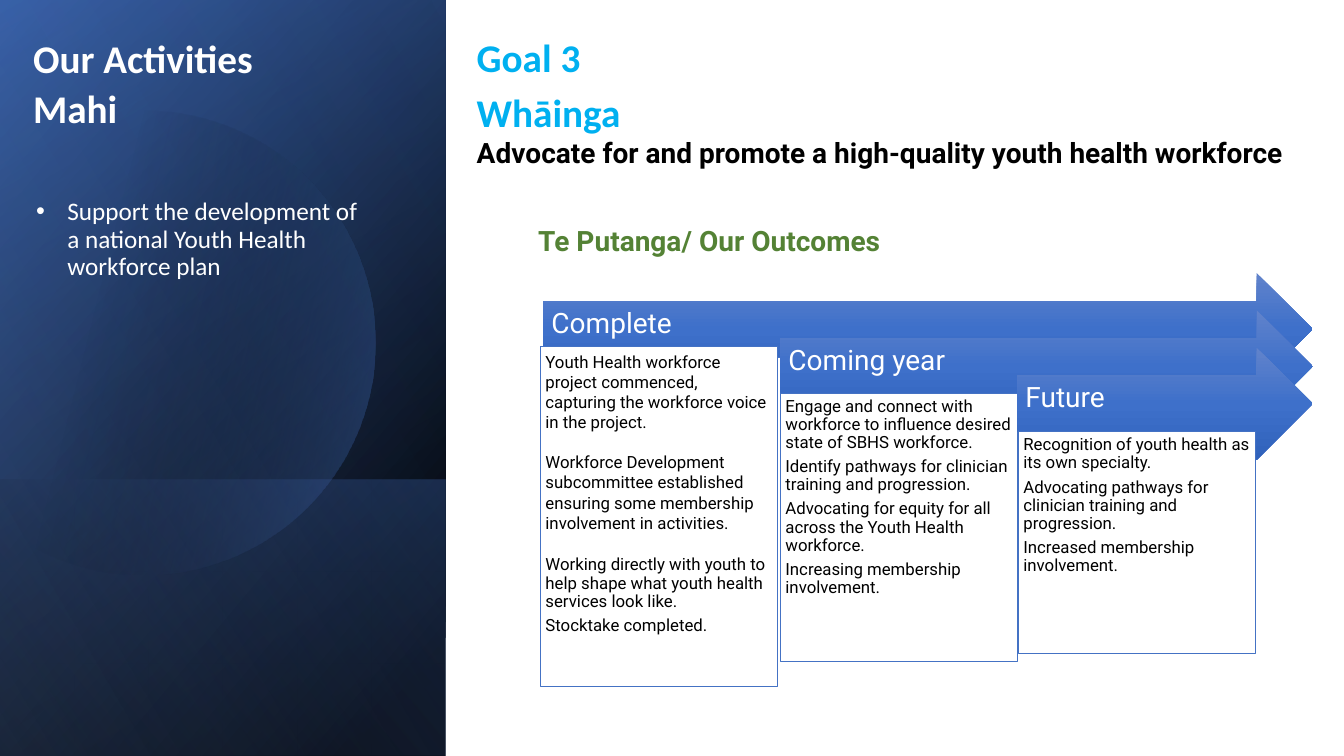
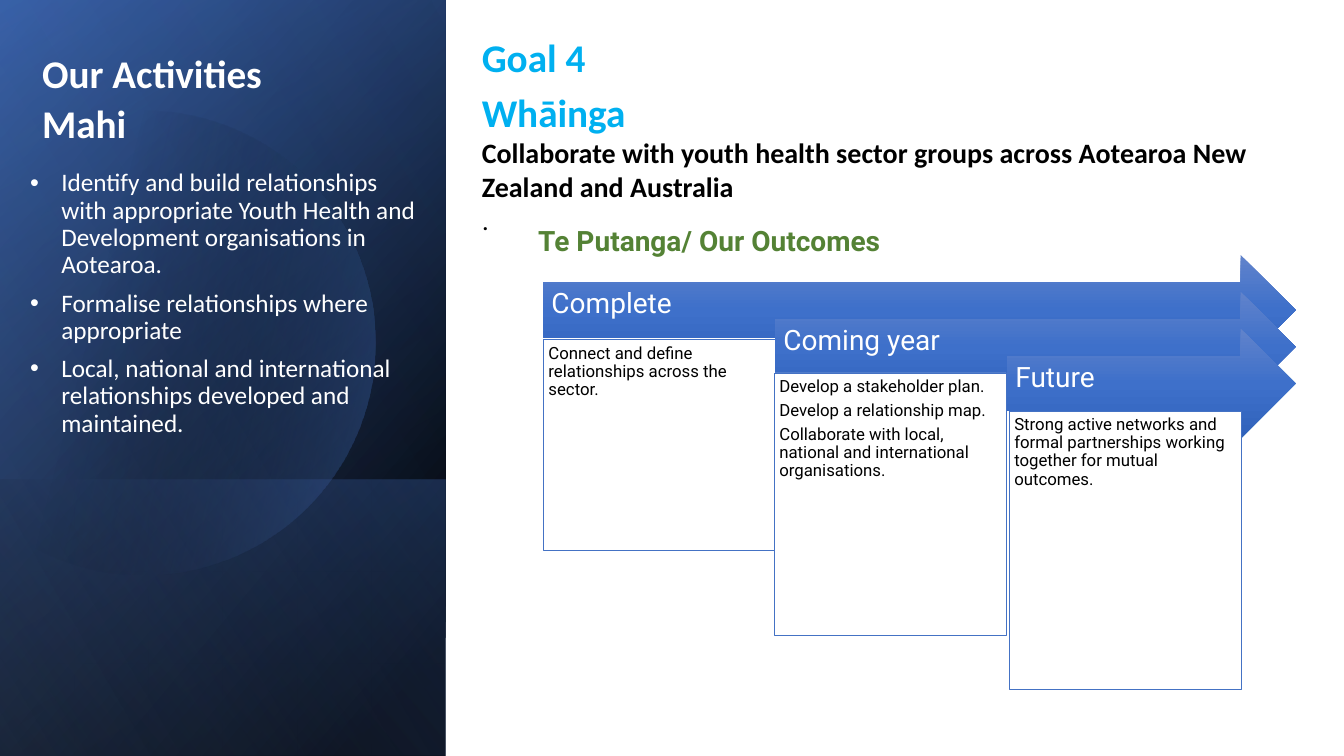
import math
from collections import namedtuple
from dataclasses import dataclass

from pptx import Presentation
from pptx import util as u
from pptx.dml.color import RGBColor
from pptx.enum import shapes, text
from pptx.oxml import parse_xml
from pptx.oxml.ns import nsdecls, qn

Box = namedtuple("Box", "x y w h")
Para = namedtuple("Para", "text line after", defaults=(0.9, 4.2))
Step = namedtuple("Step", "label box paras")


@dataclass(frozen=True)
class Theme:
    # Colours
    white: str = "FFFFFF"
    black: str = "000000"
    blue: str = "4472C4"
    navy: str = "2F5597"
    pale: str = "8FAADC"
    cyan: str = "00B0F0"
    green: str = "548235"
    arrow: tuple = ((0, "6183CB", 100), (50, "3E70CA", 100), (100, "3062BB", 100))
    # Fonts and type sizes
    head: str = "Calibri"
    body: str = "Roboto"
    title: int = 28
    sub: int = 20
    list: int = 18
    small: int = 12


T = Theme()
SIZE = Box(0, 0, 13.33, 7.5)
PANEL = Box(0, 0, 4.42, 7.5)


def place(box):
    return [u.Inches(v) for v in box]


def blend(shape, stops, angle):
    """Fill a shape with a gradient of (place, colour, opacity) stops."""
    marks = "".join(
        f'<a:gs pos="{pos * 1000}"><a:srgbClr val="{hue}">'
        f'<a:alpha val="{alpha * 1000}"/></a:srgbClr></a:gs>'
        for pos, hue, alpha in stops)
    shape.fill.background()
    props = shape._element.spPr
    props.replace(props.find(qn("a:noFill")), parse_xml(
        f'<a:gradFill {nsdecls("a")} rotWithShape="1"><a:gsLst>{marks}</a:gsLst>'
        f'<a:lin ang="{angle * 60000}" scaled="0"/></a:gradFill>'))
    shape.line.fill.background()
    shape.shadow.inherit = False


def style(run, size, hue, font, bold=False):
    face = run.font
    face.size, face.name, face.bold = u.Pt(size), font, bold
    face.color.rgb = RGBColor.from_string(hue)


def setup(frame, inset=(0.1, 0.05, 0.1, 0.05), anchor=text.MSO_ANCHOR.TOP):
    frame.word_wrap = True
    frame.vertical_anchor = anchor
    (frame.margin_left, frame.margin_top,
     frame.margin_right, frame.margin_bottom) = place(inset)


def write(frame, paras, size, hue, font, bold=False):
    """Set paragraphs that share one type style."""
    frame.text = "\n".join(p.text for p in paras)
    for item, para in zip(frame.paragraphs, paras):
        item.alignment = text.PP_ALIGN.LEFT
        item.line_spacing = para.line
        item.space_after = u.Pt(para.after)
        for run in item.runs:
            style(run, size, hue, font, bold)


def label(slide, box, paras, *look, anchor=text.MSO_ANCHOR.TOP):
    frame = slide.shapes.add_textbox(*place(box)).text_frame
    setup(frame, anchor=anchor)
    write(frame, paras, *look)
    return frame


def panel(slide, box):
    """Dark side panel: layered gradients, a lower band and a cut disc."""
    def layer(area, stops, angle):
        blend(slide.shapes.add_shape(shapes.MSO_SHAPE.RECTANGLE, *place(area)),
              stops, angle)

    layer(box, [(8, T.black, 100), (100, T.navy, 100)], 220)
    layer(box, [(0, T.black, 0), (99, T.blue, 46)], 240)
    band = 2.74
    layer(Box(box.x, box.y + box.h - band, box.w, band),
          [(2, T.blue, 29), (100, T.black, 30)], 140)

    # Disc, cut off at the panel's left edge
    mid, high, rad, count = 1.42, 3.4, 2.3, 120
    end = math.acos(-mid / rad)
    turns = [end * (2 * i / count - 1) for i in range(count + 1)]
    dots = [(u.Inches(box.x + mid + rad * math.cos(t)),
             u.Inches(box.y + high + rad * math.sin(t))) for t in turns]
    path = slide.shapes.build_freeform(*dots[0])
    path.add_line_segments(dots[1:], close=True)
    blend(path.convert_to_shape(), [(29, T.black, 0), (100, T.blue, 43)], 14)

    layer(box, [(0, T.black, 0), (99, T.pale, 11)], 150)


def tasks(slide, head, box, items):
    """Panel heading and its bulleted list."""
    label(slide, head, [Para("Our Activities", 0.9, 6), Para("Mahi", 0.9, 6)],
          T.title, T.white, T.head, True)
    frame = label(slide, box, [Para(i, 0.9, 8) for i in items],
                  T.list, T.white, T.head, anchor=text.MSO_ANCHOR.MIDDLE)
    for item in frame.paragraphs:
        props = item._p.get_or_add_pPr()
        props.set("marL", str(u.Inches(0.31)))
        props.set("indent", str(-u.Inches(0.31)))
        for tag in ('buFont typeface="Arial"', 'buChar char="•"'):
            props.append(parse_xml(f'<a:{tag} {nsdecls("a")}/>'))


def goal(slide, box, name, aim, font, tail=None):
    """Goal name, its Māori heading and the aim below."""
    paras = [Para(name, 1, 6), Para(f"Whāinga\v{aim}", 1, 0)]
    if tail:
        paras.append(Para(tail, 1, 6))
    frame = label(slide, box, paras, T.title, T.cyan, T.head, True)
    style(frame.paragraphs[1].runs[1], T.sub, T.black, font, True)
    if tail:
        style(frame.paragraphs[2].runs[0], T.sub, T.black, T.body)


def flow(slide, box, drop, tall, steps):
    """Stepped arrows that share one tip, each with a text box below."""
    label(slide, Box(5.24, 2.21, 5.67, 0.54), [Para("Te Putanga/ Our Outcomes")],
          T.sub, T.green, T.body, True)
    for i, step in enumerate(steps):
        left = i * step.box.w
        arrow = slide.shapes.add_shape(
            shapes.MSO_SHAPE.RIGHT_ARROW,
            *place(Box(box.x + left, box.y + i * drop, box.w - left, tall)))
        blend(arrow, T.arrow, 90)
        setup(arrow.text_frame, (0.08, 0.08, 0.28, 0.18), text.MSO_ANCHOR.MIDDLE)
        write(arrow.text_frame, [Para(step.label)], T.sub, T.white, T.body)

        # Outcome card, offset from the flow's corner
        card = slide.shapes.add_shape(
            shapes.MSO_SHAPE.RECTANGLE,
            *place(step.box._replace(x=box.x + step.box.x, y=box.y + step.box.y)))
        card.shadow.inherit = False
        card.fill.solid()
        card.fill.fore_color.rgb = RGBColor.from_string(T.white)
        card.line.color.rgb = RGBColor.from_string(T.blue)
        card.line.width = u.Pt(0.5)
        setup(card.text_frame, (0.05,) * 4)
        write(card.text_frame, step.paras, T.small, T.black, T.body)


def page(deck):
    slide = deck.slides.add_slide(deck.slide_layouts[6])
    panel(slide, PANEL)
    return slide


def third(deck):
    slide = page(deck)
    tasks(slide, Box(0.23, 0.34, 3.5, 1.1), Box(0.26, 1.75, 3.4, 1.26),
          ["Support the development of a national Youth Health workforce plan"])
    goal(slide, Box(4.63, 0.28, 8.25, 1.46), "Goal 3",
         "Advocate for and promote a high-quality youth health workforce", T.body)
    flow(slide, Box(5.39, 2.71, 7.63, 4.1), 0.37, 1.11, [
        Step("Complete", Box(-0.03, 0.73, 2.35, 3.37), [
            Para("Youth Health workforce project commenced, capturing the "
                 "workforce voice in the project.", 1, 14),
            Para("Workforce Development subcommittee established ensuring some "
                 "membership involvement in activities.", 1, 17),
            Para("Working directly with youth to help shape what youth health "
                 "services look like."),
            Para("Stocktake completed.")]),
        Step("Coming year", Box(2.35, 1.19, 2.35, 2.66), [
            Para("Engage and connect with workforce to influence desired state "
                 "of SBHS workforce."),
            Para("Identify pathways for clinician training and progression."),
            Para("Advocating for equity for all across the Youth Health workforce."),
            Para("Increasing membership involvement.")]),
        Step("Future", Box(4.71, 1.57, 2.35, 2.2), [
            Para("Recognition of youth health as its own specialty."),
            Para("Advocating pathways for clinician training and progression."),
            Para("Increased membership involvement.")])])


def fourth(deck):
    slide = page(deck)
    tasks(slide, Box(0.32, 0.49, 3.5, 1.1), Box(0.2, 1.35, 4.08, 3.33), [
        "Identify and build relationships with appropriate Youth Health and "
        "Development organisations in Aotearoa.",
        "Formalise relationships where appropriate",
        "Local, national and international relationships developed and maintained."])
    goal(slide, Box(4.68, 0.28, 8.25, 2.14), "Goal 4",
         "Collaborate with youth health sector groups across Aotearoa New "
         "Zealand and Australia", T.head, ".")
    flow(slide, Box(5.39, 2.53, 7.46, 4.31), 0.365, 1.09, [
        Step("Complete", Box(0, 0.84, 2.3, 2.09), [
            Para("Connect and define relationships across the sector.")]),
        Step("Coming year", Box(2.29, 1.17, 2.3, 2.6), [
            Para("Develop a stakeholder plan."),
            Para("Develop a relationship map."),
            Para("Collaborate with local, national and international "
                 "organisations.")]),
        Step("Future", Box(4.62, 1.55, 2.3, 2.76), [
            Para("Strong active networks and formal partnerships working "
                 "together for mutual outcomes.")])])


def main():
    deck = Presentation()
    deck.slide_width, deck.slide_height = place(SIZE)[2:]
    third(deck)
    fourth(deck)
    deck.save("out.pptx")


if __name__ == "__main__":
    main()
